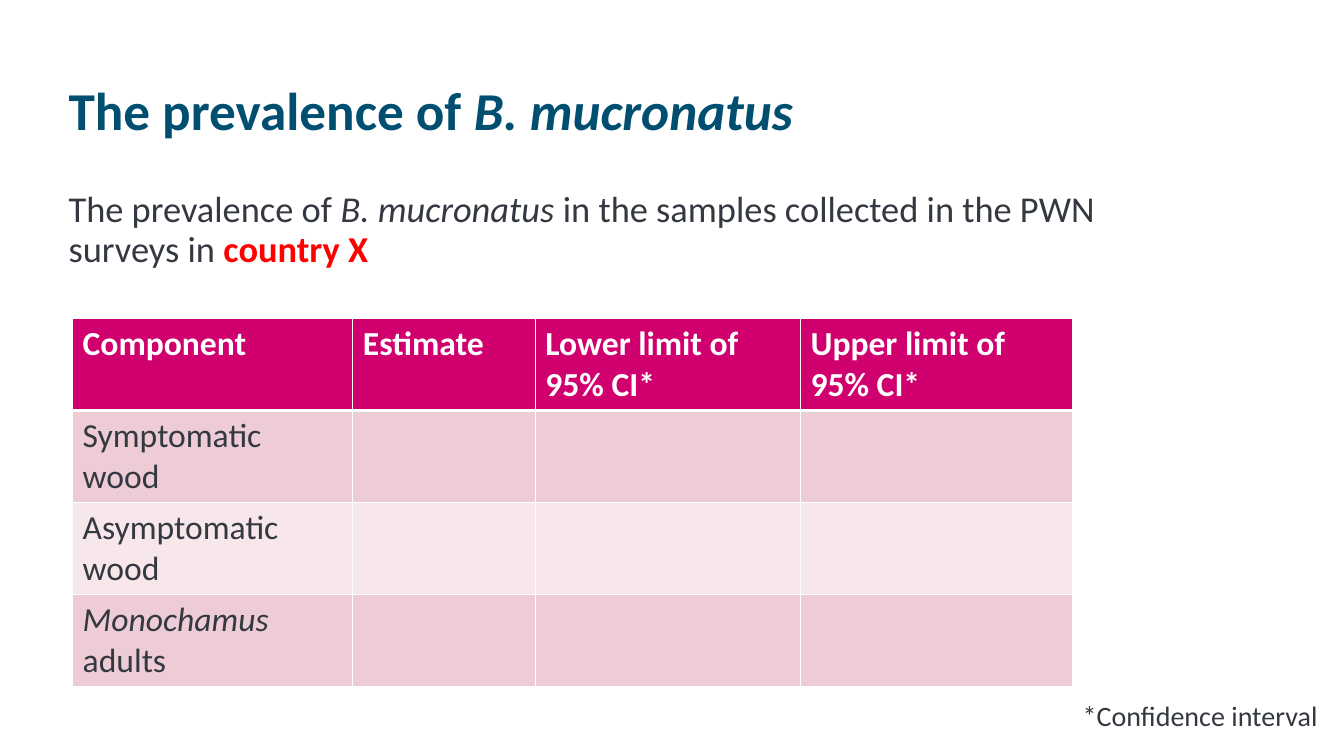
from lxml import etree
from pptx import Presentation
from pptx.dml.color import RGBColor
from pptx.enum import text
from pptx.oxml.ns import qn
from pptx.util import Inches, Pt

# Content: a text is a list of (words, style) runs
TITLE = [("The prevalence of ", ""), ("B. mucronatus", "italic")]
BODY = [("The prevalence of ", ""), ("B. mucronatus", "italic"),
        (" in the samples collected in the PWN surveys in ", ""),
        ("country X", "alert")]
HEADERS = ["Component", "Estimate", "Lower limit of 95% CI*", "Upper limit of 95% CI*"]
COMPONENTS = [[("Symptomatic wood", "")],
              [("Asymptomatic wood", "")],
              [("Monochamus", "italic"), (" adults", "")]]
FOOTNOTE = [("*Confidence interval", "")]

# Look and layout
FONT = "Calibri"
NAVY, INK, RED, WHITE = "004F71", "343841", "FF0000", "FFFFFF"
MAGENTA, BANDS = "D0006F", ["EECCD5", "F7E7EB"]
WIDTH, HEIGHT = 13.33, 7.5
LEFT, BODY_TOP = 0.58, 1.85
TABLE_LEFT, TABLE_TOP = 0.72, 3.16
COLUMNS = [2.78, 1.81, 2.63, 2.7]
ROW_HEIGHT = 0.91


def color(value):
    return RGBColor.from_string(value)


def add_runs(paragraph, runs, size, ink, bold=False):
    for words, style in runs:
        run = paragraph.add_run()
        run.text = words
        font = run.font
        font.name, font.size = FONT, Pt(size)
        font.bold = bold or style == "alert"
        font.italic = style == "italic"
        font.color.rgb = color(RED if style == "alert" else ink)


def place(shape, left, top, width, height):
    shape.left, shape.top = Inches(left), Inches(top)
    shape.width, shape.height = Inches(width), Inches(height)


def set_borders(cell, widths):
    properties = cell._tc.get_or_add_tcPr()
    for index, (side, points) in enumerate(zip("LRTB", widths)):
        line = etree.Element(qn("a:ln" + side), w=str(Pt(points)))
        fill = etree.SubElement(line, qn("a:solidFill"))
        etree.SubElement(fill, qn("a:srgbClr"), val=WHITE)
        properties.insert(index, line)


def main():
    presentation = Presentation()
    presentation.slide_width = Inches(WIDTH)
    presentation.slide_height = Inches(HEIGHT)
    slide = presentation.slides.add_slide(presentation.slide_layouts[1])

    # Title
    title = slide.shapes.title
    place(title, LEFT, 0.4, 10.67, BODY_TOP - 0.4)
    title.text_frame.auto_size = text.MSO_AUTO_SIZE.NONE
    title.text_frame.vertical_anchor = text.MSO_ANCHOR.MIDDLE
    paragraph = title.text_frame.paragraphs[0]
    paragraph.alignment = text.PP_ALIGN.LEFT
    paragraph.line_spacing = Pt(40)
    add_runs(paragraph, TITLE, 38, NAVY, bold=True)

    # Introductory sentence, without a bullet
    body = slide.placeholders[1]
    place(body, LEFT, BODY_TOP, 11.5, 4.91)
    body.text_frame.auto_size = text.MSO_AUTO_SIZE.NONE
    paragraph = body.text_frame.paragraphs[0]
    properties = paragraph._p.get_or_add_pPr()
    properties.set("marL", "0")
    properties.set("indent", "0")
    etree.SubElement(properties, qn("a:buNone"))
    paragraph.line_spacing = 0.9
    paragraph.space_before = Pt(0)
    add_runs(paragraph, BODY, 26, INK)

    # Prevalence table: header row, then banded rows with empty values
    rows = [[[(header, "")] for header in HEADERS]]
    rows += [[component] + [[]] * (len(HEADERS) - 1) for component in COMPONENTS]
    table = slide.shapes.add_table(
        len(rows), len(COLUMNS), Inches(TABLE_LEFT), Inches(TABLE_TOP),
        Inches(sum(COLUMNS)), Inches(ROW_HEIGHT * len(rows))).table
    for column, width in zip(table.columns, COLUMNS):
        column.width = Inches(width)
    for r, row in enumerate(rows):
        is_header = r == 0
        for c, runs in enumerate(row):
            cell = table.cell(r, c)
            cell.fill.solid()
            cell.fill.fore_color.rgb = color(MAGENTA if is_header else BANDS[(r - 1) % 2])
            set_borders(cell, (1, 1, 3 if r == 1 else 1, 3 if is_header else 1))
            add_runs(cell.text_frame.paragraphs[0], runs, 24,
                     WHITE if is_header else INK, bold=is_header)

    # Footnote
    footnote = slide.shapes.add_textbox(
        Inches(TABLE_LEFT + sum(COLUMNS)), Inches(6.88), Inches(2.56), Inches(0.44))
    footnote.text_frame.word_wrap = False
    footnote.text_frame.auto_size = text.MSO_AUTO_SIZE.SHAPE_TO_FIT_TEXT
    add_runs(footnote.text_frame.paragraphs[0], FOOTNOTE, 20, INK)

    presentation.save("out.pptx")


if __name__ == "__main__":
    main()
